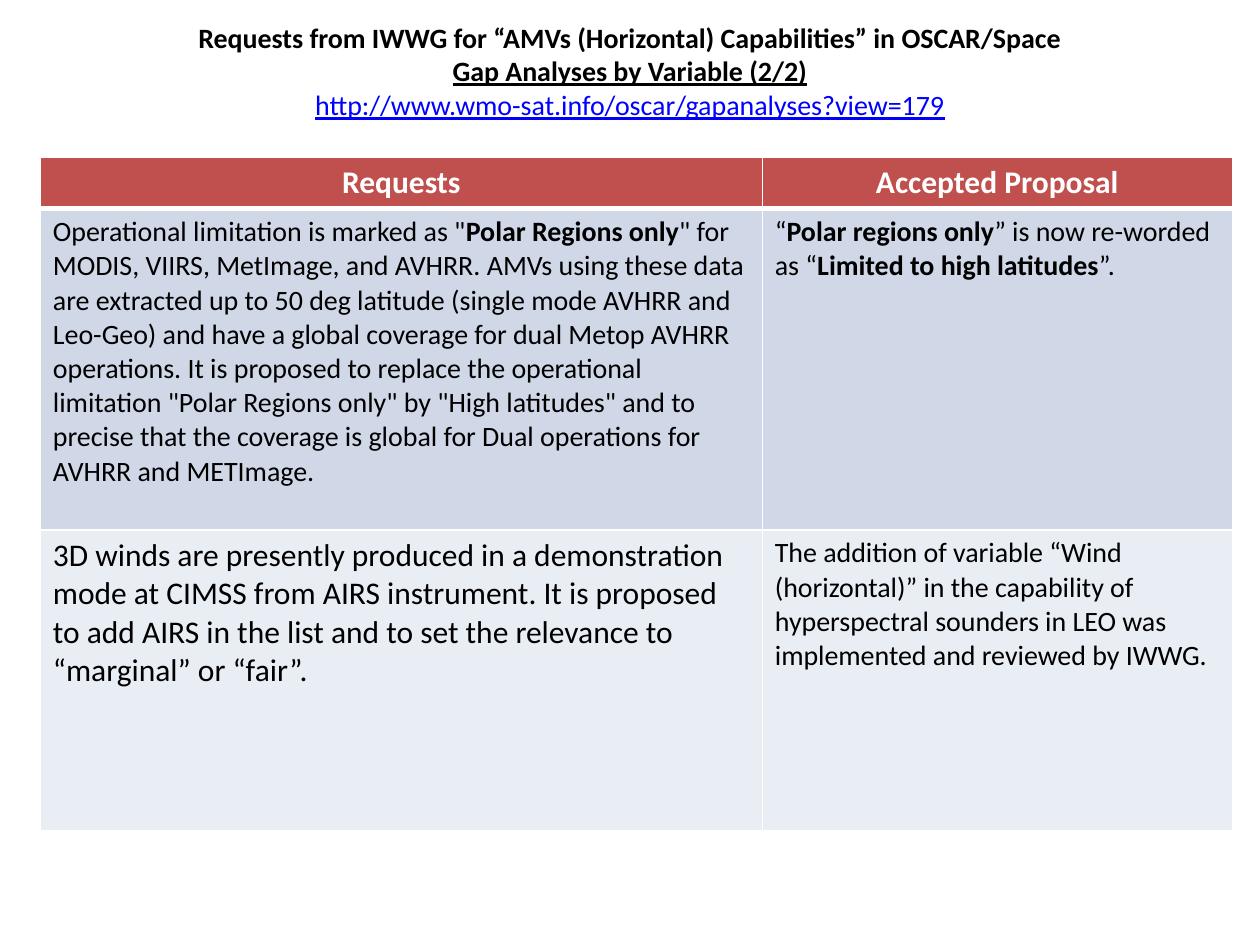
from lxml import etree
from pptx import Presentation
from pptx.dml.color import RGBColor
from pptx.enum.text import MSO_ANCHOR, MSO_AUTO_SIZE, PP_ALIGN
from pptx.oxml.ns import qn
from pptx.util import Inches, Pt

CENTER, LEFT = PP_ALIGN.CENTER, PP_ALIGN.LEFT
MIDDLE = MSO_ANCHOR.MIDDLE
FIXED = MSO_AUTO_SIZE.NONE
FONT = "Calibri"
BLACK, WHITE, BLUE = "000000", "FFFFFF", "0000FF"
FILLS = ["C0504D", "D0D8E8", "E9EDF4"]
COLS = [5.73, 3.73]
ROWS = [0.4, 2.55, 2.39]
TITLE = [
    "Requests from IWWG for “AMVs (Horizontal) Capabilities” in OSCAR/Space",
    "Gap Analyses by Variable (2/2)",
    "http://www.wmo-sat.info/oscar/gapanalyses?view=179",
]
HEADS = ["Requests", "Accepted Proposal"]
BODY = [
    [
        (16, ['Operational limitation is marked as "', "Polar Regions only",
              '" for MODIS, VIIRS, MetImage, and AVHRR. AMVs using these data are '
              "extracted up to 50 deg latitude (single mode AVHRR and Leo-Geo) and "
              "have a global coverage for dual Metop AVHRR operations. It is proposed "
              'to replace the operational limitation "Polar Regions only" by "High '
              'latitudes" and to precise that the coverage is global for Dual '
              "operations for AVHRR and METImage."]),
        (16, ["“", "Polar regions only", "” is now re-worded as “",
              "Limited to high latitudes", "”."]),
    ],
    [
        (18, ["3D winds are presently produced in a demonstration mode at CIMSS from "
              "AIRS instrument. It is proposed to add AIRS in the list and to set the "
              "relevance to “marginal” or “fair”."]),
        (16, ["The addition of variable “Wind (horizontal)” in the capability of "
              "hyperspectral sounders in LEO was implemented and reviewed by IWWG."]),
    ],
]


def color(code):
    """Turn a hex string into a colour."""
    return RGBColor.from_string(code)


def style(run, size, code, bold=False, under=False):
    """Format one run of text."""
    font = run.font
    font.name, font.size = FONT, Pt(size)
    font.bold, font.underline = bold, under
    font.color.rgb = color(code)


def add_title(slide, left, top, width, height):
    """Place the three-line title in the given box."""
    title = slide.shapes.title
    title.left, title.top = Inches(left), Inches(top)
    title.width, title.height = Inches(width), Inches(height)
    frame = title.text_frame
    frame.auto_size, frame.vertical_anchor = FIXED, MIDDLE
    para = frame.paragraphs[0]
    para.text = "\v".join(TITLE)
    para.alignment = CENTER
    looks = [(BLACK, True, False), (BLACK, True, True), (BLUE, False, True)]
    for run, look in zip(para.runs, looks):
        style(run, 16, *look)


def add_edge(cell, side, width):
    """Draw a white border on one side of a cell."""
    props = cell._tc.get_or_add_tcPr()
    line = etree.SubElement(props, qn("a:ln" + side), w=str(Pt(width)))
    fill = etree.SubElement(line, qn("a:solidFill"))
    etree.SubElement(fill, qn("a:srgbClr"), val=WHITE)


def fill_cell(cell, row, size, parts):
    """Fill a cell with text whose every second part is bold."""
    head = row == 0
    for side in "LRTB":
        thick = (head and side == "B") or (row == 1 and side == "T")
        add_edge(cell, side, 3 if thick else 1)
    cell.fill.solid()
    cell.fill.fore_color.rgb = color(FILLS[row])
    para = cell.text_frame.paragraphs[0]
    para.alignment = CENTER if head else LEFT
    for spot, part in enumerate(parts):
        run = para.add_run()
        run.text = part
        style(run, size, WHITE if head else BLACK, head or spot % 2 == 1)


def add_grid(slide, left, top):
    """Place the table of requests and proposals."""
    frame = slide.shapes.add_table(len(ROWS), len(COLS), Inches(left), Inches(top),
                                   Inches(sum(COLS)), Inches(sum(ROWS)))
    table = frame.table
    for col, width in zip(table.columns, COLS):
        col.width = Inches(width)
    for row, height in zip(table.rows, ROWS):
        row.height = Inches(height)
    heads = [(18, [head]) for head in HEADS]
    for row, items in enumerate([heads] + BODY):
        for col, (size, parts) in enumerate(items):
            fill_cell(table.cell(row, col), row, size, parts)


def main():
    """Build and save the slide."""
    deck = Presentation()
    deck.slide_width, deck.slide_height = Inches(10), Inches(7.5)
    slide = deck.slides.add_slide(deck.slide_layouts[5])
    add_grid(slide, 0.32, 1.25)
    add_title(slide, 0.5, 0.02, 9, 1.08)
    deck.save("out.pptx")


if __name__ == "__main__":
    main()
